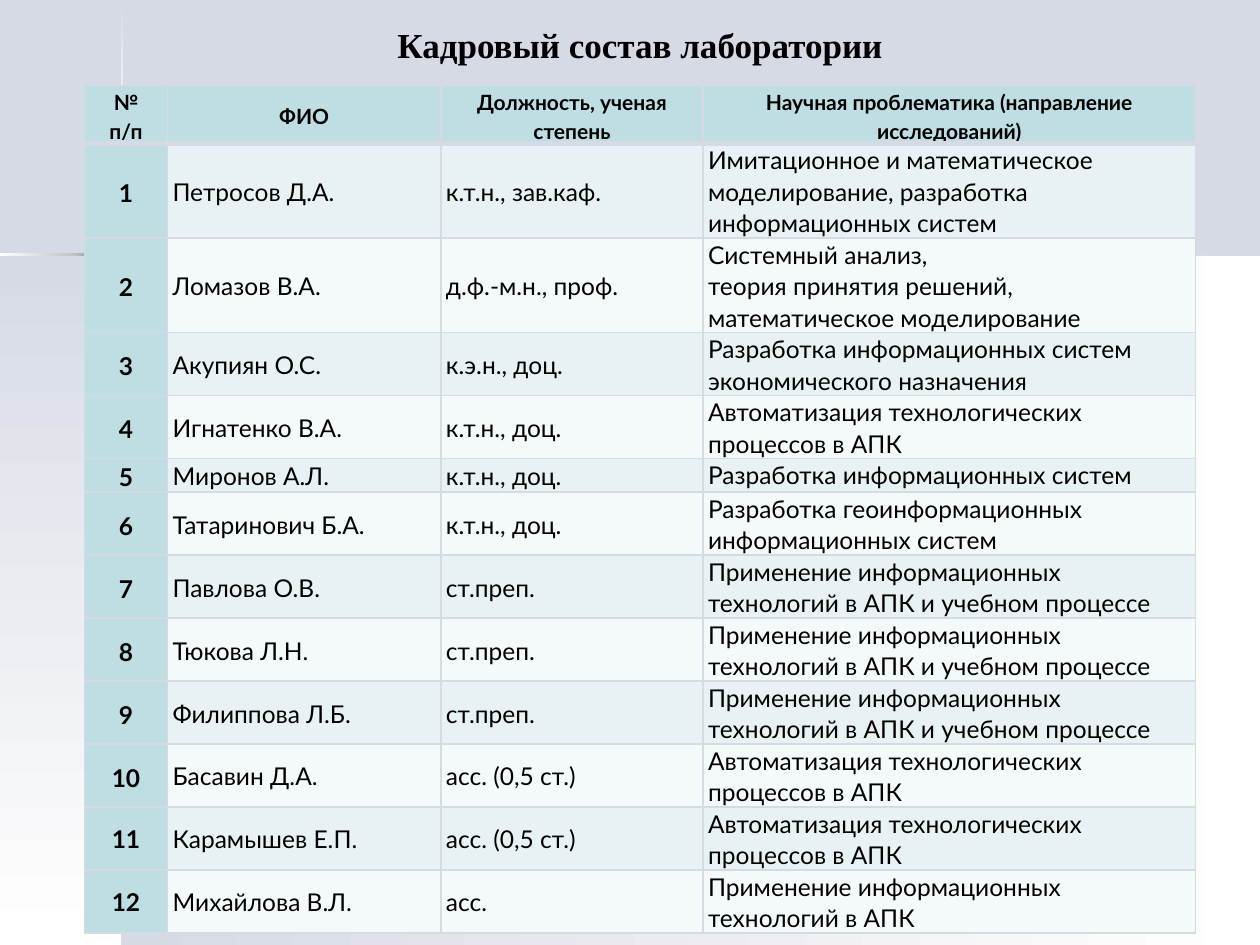
from typing import NamedTuple

from lxml import etree
from pptx import Presentation
from pptx.dml.color import RGBColor
from pptx.enum import shapes, text
from pptx.oxml.ns import qn
from pptx.util import Inches, Pt

COLORS = {
    "back": "D6DAE4",
    "white": "FFFFFF",
    "silver": "C0C0C0",
    "blue": "3333CC",
    "black": "000000",
    "head": "BFDEE3",
    "odd": "E8F2F4",
    "even": "F4F9FA",
}


class Panel(NamedTuple):
    left: float
    top: float
    width: float
    height: float
    stops: tuple[str, ...]
    angle: int


class Member(NamedTuple):
    name: str
    position: str
    topic: str


FADE = ("back", "white")
GLOW = ("silver", "blue", "silver")
PANELS = [
    Panel(0.97, 2.02, 9.03, 5.48, FADE, 0),
    Panel(0, 2.02, 0.97, 5.48, FADE, 90),
    Panel(0.96, 0.01, 0.02, 1.2, FADE, 90),
    Panel(0.96, 2.82, 0.02, 4.68, ("white", "back"), 90),
    Panel(1.77, 2.01, 8.23, 0.02, ("white", "back"), 0),
    Panel(0.96, 2.38, 0.02, 0.44, ("silver", "white"), 90),
    Panel(0.96, 1.21, 0.02, 0.44, ("white", "silver"), 90),
    Panel(0.96, 1.65, 0.02, 0.73, GLOW, 90),
    Panel(0, 2.01, 0.61, 0.02, ("white", "silver"), 0),
    Panel(1.33, 2.01, 0.44, 0.02, ("silver", "white"), 0),
    Panel(0.6, 2.01, 0.73, 0.02, GLOW, 0),
]

AUTOMATION = "Автоматизация технологических процессов в АПК"
APPLICATION = "Применение информационных технологий в АПК"
TEACHING = APPLICATION + " и учебном процессе"
HEADINGS = ["№\nп/п", "ФИО", "Должность, ученая степень",
            "Научная проблематика (направление исследований)"]
MEMBERS = [
    Member("Петросов Д.А.", "к.т.н., зав.каф.",
           "Имитационное и математическое моделирование, разработка информационных систем"),
    Member("Ломазов В.А.", "д.ф.-м.н., проф.",
           "Системный анализ,\nтеория принятия решений, математическое моделирование"),
    Member("Акупиян О.С.", "к.э.н., доц.",
           "Разработка информационных систем экономического назначения"),
    Member("Игнатенко В.А.", "к.т.н., доц.", AUTOMATION),
    Member("Миронов А.Л.", "к.т.н., доц.", "Разработка информационных систем"),
    Member("Татаринович Б.А.", "к.т.н., доц.",
           "Разработка геоинформационных информационных систем"),
    Member("Павлова О.В.", "ст.преп.", TEACHING),
    Member("Тюкова Л.Н.", "ст.преп.", TEACHING),
    Member("Филиппова Л.Б.", "ст.преп.", TEACHING),
    Member("Басавин Д.А.", "асс. (0,5 ст.)", AUTOMATION),
    Member("Карамышев Е.П.", "асс. (0,5 ст.)", AUTOMATION),
    Member("Михайлова В.Л.", "асс.", APPLICATION),
]
COLUMN_WIDTHS = [0.66, 2.17, 2.08, 3.91]
ROW_HEIGHTS = [0.25, 0.47, 0.47, 0.35, 0.35, 0.24] + [0.35] * 6 + [0.24]


def rgb(name: str) -> RGBColor:
    return RGBColor.from_string(COLORS[name])


def write(tf, content: str, *, size: float, font: str = "Lato", bold: bool = False,
          center: bool = False, spacing: float = 1.0) -> None:
    """Fill a text frame, one paragraph per line of content."""
    tf.text = content
    for p in tf.paragraphs:
        p.alignment = text.PP_ALIGN.CENTER if center else text.PP_ALIGN.LEFT
        p.line_spacing = spacing
        p.space_before = p.space_after = Pt(0)
        for r in p.runs:
            r.font.name, r.font.size, r.font.bold = font, Pt(size), bold
            r.font.color.rgb = rgb("black")


def add_panel(slide, panel: Panel) -> None:
    sp = slide.shapes.add_shape(shapes.MSO_SHAPE.RECTANGLE, Inches(panel.left),
                                Inches(panel.top), Inches(panel.width), Inches(panel.height))
    sp.shadow.inherit = False
    sp.line.fill.background()
    sp.fill.gradient()
    grad = sp._element.spPr.find(qn("a:gradFill"))
    stops = grad.find(qn("a:gsLst"))
    for stop in list(stops):
        stops.remove(stop)
    for i, name in enumerate(panel.stops):
        position = 100000 * i // (len(panel.stops) - 1)
        stop = etree.SubElement(stops, qn("a:gs"), pos=str(position))
        etree.SubElement(stop, qn("a:srgbClr"), val=COLORS[name])
    grad.find(qn("a:lin")).set("ang", str(panel.angle * 60000))


def set_borders(cell, *, top: float = 1, bottom: float = 1) -> None:
    widths = {"a:lnL": 1, "a:lnR": 1, "a:lnT": top, "a:lnB": bottom}
    tc_pr = cell._tc.get_or_add_tcPr()
    for i, (tag, width) in enumerate(widths.items()):
        ln = etree.Element(qn(tag), w=str(Pt(width)))
        fill = etree.SubElement(ln, qn("a:solidFill"))
        etree.SubElement(fill, qn("a:srgbClr"), val=COLORS["back"])
        tc_pr.insert(i, ln)


def add_staff_table(slide) -> None:
    rows = [HEADINGS] + [[str(n), *member] for n, member in enumerate(MEMBERS, 1)]
    table = slide.shapes.add_table(len(rows), len(HEADINGS), Inches(0.67), Inches(0.68),
                                   Inches(sum(COLUMN_WIDTHS)), Inches(sum(ROW_HEIGHTS))).table
    table.first_row = table.horz_banding = False
    for column, width in zip(table.columns, COLUMN_WIDTHS):
        column.width = Inches(width)
    for i, (row, height) in enumerate(zip(rows, ROW_HEIGHTS)):
        table.rows[i].height = Inches(height)
        for j, content in enumerate(row):
            cell = table.cell(i, j)
            heading = i == 0 or j == 0
            cell.margin_left = cell.margin_right = Inches(0.04)
            cell.margin_top = cell.margin_bottom = 0
            last = j == len(row) - 1
            cell.vertical_anchor = text.MSO_ANCHOR.TOP if last else text.MSO_ANCHOR.MIDDLE
            cell.fill.solid()
            cell.fill.fore_color.rgb = rgb("head" if heading else "odd" if i % 2 else "even")
            set_borders(cell, top=3 if i == 1 else 1, bottom=3 if i == 0 else 1)
            write(cell.text_frame, content, size=12 if i == 0 else 14, bold=heading,
                  center=heading, spacing=1.15 if heading and i < 11 else 1.07)


def add_title(slide) -> None:
    title = slide.shapes.title
    title.left, title.top = Inches(3.04), Inches(0.13)
    title.width, title.height = Inches(4.08), Inches(0.44)
    tf = title.text_frame
    tf.word_wrap = False
    tf.auto_size = text.MSO_AUTO_SIZE.SHAPE_TO_FIT_TEXT
    tf.vertical_anchor = text.MSO_ANCHOR.MIDDLE
    write(tf, "Кадровый состав лаборатории", size=20, font="Times New Roman",
          bold=True, center=True)


def main() -> None:
    prs = Presentation()
    prs.slide_width, prs.slide_height = Inches(10), Inches(7.5)
    slide = prs.slides.add_slide(prs.slide_layouts[5])
    slide.background.fill.solid()
    slide.background.fill.fore_color.rgb = rgb("back")
    for panel in PANELS:
        add_panel(slide, panel)
    add_staff_table(slide)
    add_title(slide)
    prs.save("out.pptx")


if __name__ == "__main__":
    main()
